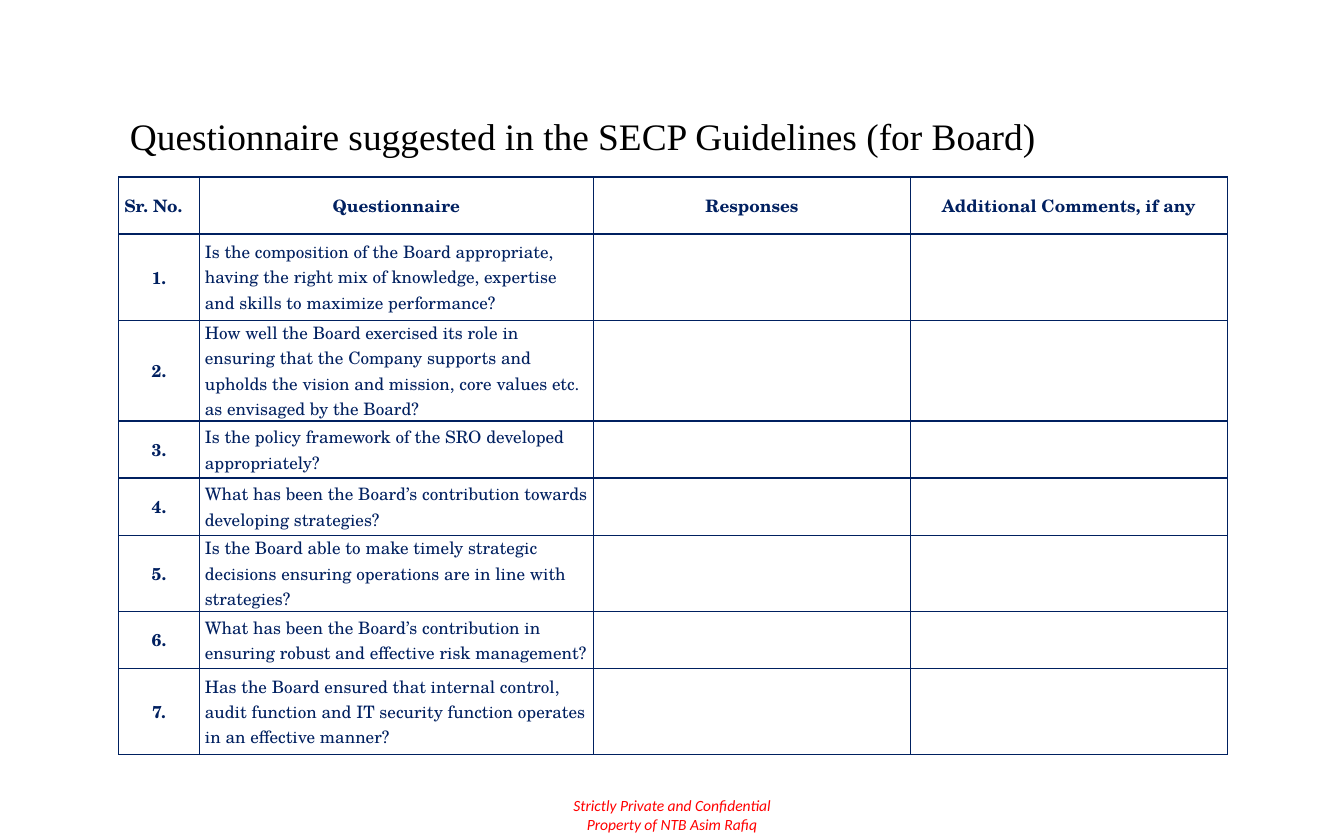
from lxml.etree import SubElement
from pptx import Presentation
from pptx.dml.color import RGBColor
from pptx.enum.text import MSO_ANCHOR, PP_ALIGN
from pptx.oxml.ns import qn
from pptx.util import Inches, Pt

COLORS = {"title": "000000", "navy": "002060", "red": "FF0000"}
HEADS = ["Sr. No.", "Questionnaire", "Responses", "Additional Comments, if any"]
ASKS = [
    "Is the composition of the Board appropriate, having the right mix of knowledge, expertise and skills to maximize performance?",
    "How well the Board exercised its role in ensuring that the Company supports and upholds the vision and mission, core values etc. as envisaged by the Board?",
    "Is the policy framework of the SRO developed appropriately?",
    "What has been the Board’s contribution towards developing strategies?",
    "Is the Board able to make timely strategic decisions ensuring operations are in line with strategies?",
    "What has been the Board’s contribution in ensuring robust and effective risk management?",
    "Has the Board ensured that internal control, audit function and IT security function operates in an effective manner?",
]
WIDTHS = [0.72, 3.52, 2.83, 2.83]
HEIGHTS = [0.51, 0.77, 0.9, 0.51, 0.51, 0.68, 0.51, 0.77]


class Deck:
    """Holds the style and the current slide, and adds each kind of element."""

    def __init__(self):
        self.show = Presentation()
        self.show.slide_width, self.show.slide_height = Inches(12), Inches(7.5)
        self.slide = self.show.slides.add_slide(self.show.slide_layouts[5])

    def style(self, frame, font, size, color, align, bold=False, italic=False):
        for para in frame.paragraphs:
            para.alignment = align
            for run in para.runs:
                run.font.name, run.font.size = font, Pt(size)
                run.font.bold, run.font.italic = bold, italic
                run.font.color.rgb = RGBColor.from_string(COLORS[color])

    def title(self, text, left, top, width, height):
        box = self.slide.shapes.title
        box.left, box.top = Inches(left), Inches(top)
        box.width, box.height = Inches(width), Inches(height)
        frame = box.text_frame
        frame.text = text
        frame.vertical_anchor = MSO_ANCHOR.TOP
        frame.paragraphs[0].line_spacing = 0.9
        self.style(frame, "Times New Roman", 24, "title", PP_ALIGN.LEFT)

    def footer(self, text, left, top, width, height):
        box = self.slide.shapes.add_textbox(
            Inches(left), Inches(top), Inches(width), Inches(height))
        frame = box.text_frame
        frame.text = text
        self.style(frame, "Calibri", 10, "red", PP_ALIGN.CENTER, italic=True)

    def border(self, cell):
        props = cell._tc.get_or_add_tcPr()
        for spot, side in enumerate(["lnL", "lnR", "lnT", "lnB"]):
            line = SubElement(props, qn(f"a:{side}"), w=str(Pt(1)))
            fill = SubElement(line, qn("a:solidFill"))
            SubElement(fill, qn("a:srgbClr"), val=COLORS["navy"])
            props.insert(spot, line)

    def cell(self, cell, text, align, bold):
        cell.fill.background()
        self.border(cell)
        cell.vertical_anchor = MSO_ANCHOR.MIDDLE
        cell.margin_left = cell.margin_right = Inches(0.05)
        cell.margin_top = cell.margin_bottom = 0
        cell.text = text
        self.style(cell.text_frame, "TeX Gyre Schola", 11, "navy", align, bold)

    def table(self, rows, left, top):
        grid = self.slide.shapes.add_table(
            len(rows), len(WIDTHS), Inches(left), Inches(top),
            Inches(sum(WIDTHS)), Inches(sum(HEIGHTS))).table
        grid.first_row = grid.horz_banding = False
        for col, width in zip(grid.columns, WIDTHS):
            col.width = Inches(width)
        for r, (row, height) in enumerate(zip(rows, HEIGHTS)):
            grid.rows[r].height = Inches(height)
            for c, text in enumerate(row):
                head = r == 0
                flush = c == 0 if head else c == 1
                align = PP_ALIGN.LEFT if flush else PP_ALIGN.CENTER
                self.cell(grid.cell(r, c), text, align, head or c == 0)


def main():
    deck = Deck()
    deck.footer("Strictly Private and Confidential\nProperty of NTB Asim Rafiq",
                5.01, 7.06, 1.98, 0.44)
    deck.title("Questionnaire suggested in the SECP Guidelines (for Board)",
               1.06, 1.01, 9.31, 0.58)
    rows = [[f"{n}.", ask, "", ""] for n, ask in enumerate(ASKS, 1)]
    deck.table([HEADS] + rows, 1.06, 1.58)
    deck.show.save("out.pptx")


if __name__ == "__main__":
    main()
